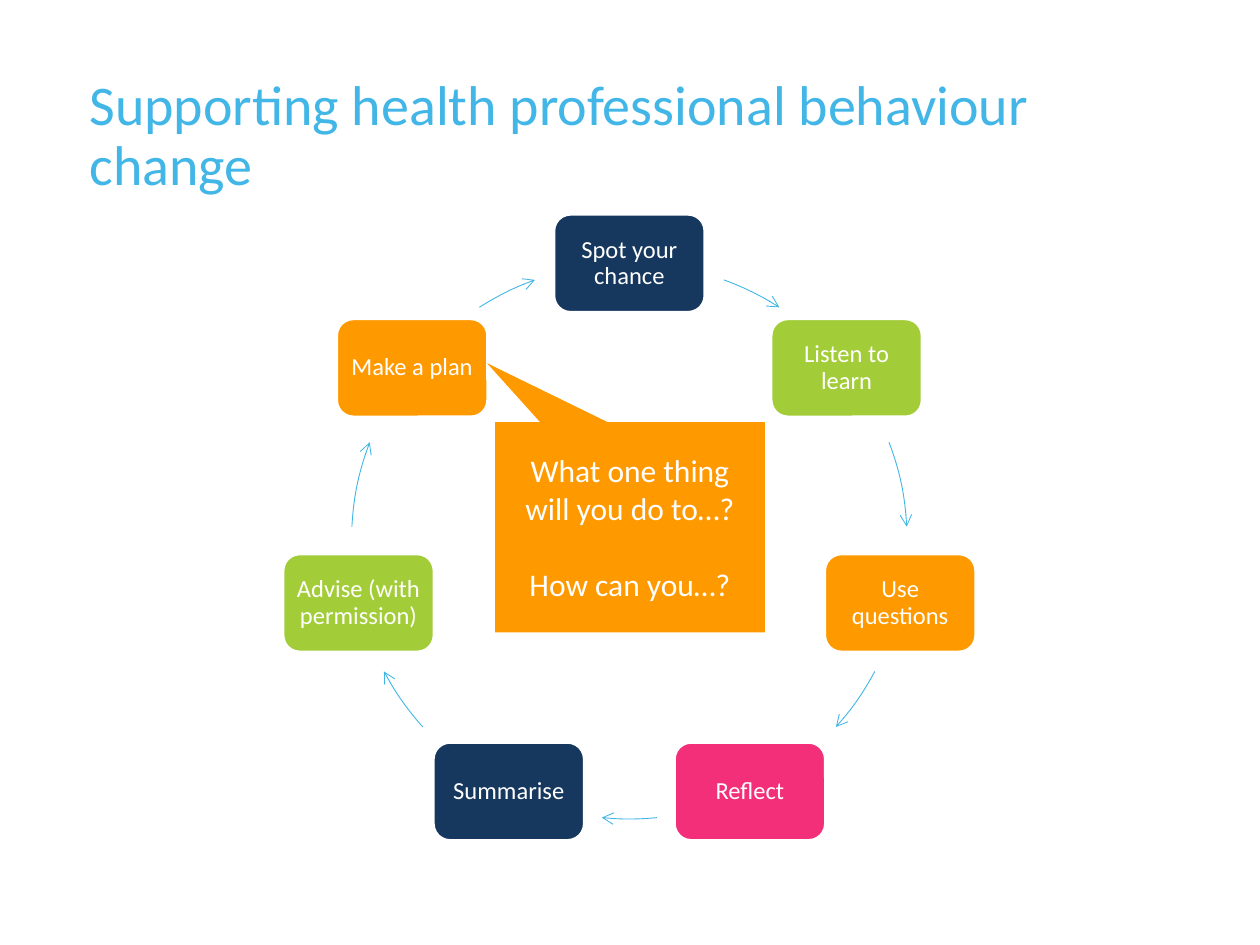
from dataclasses import dataclass
from math import cos, radians, sin

from lxml import etree
from pptx import Presentation
from pptx.dml.color import RGBColor as RGB
from pptx.enum.shapes import MSO_SHAPE as SHAPE
from pptx.enum.text import MSO_ANCHOR as ANCHOR, PP_ALIGN as ALIGN
from pptx.oxml.ns import qn
from pptx.util import Inches, Pt


@dataclass(frozen=True)
class Theme:
    font: str = "Calibri"
    title: RGB = RGB(0x42, 0xB6, 0xE6)
    arrow: RGB = RGB(0x41, 0xB6, 0xE6)
    navy: RGB = RGB(0x16, 0x38, 0x5E)
    green: RGB = RGB(0xA3, 0xCD, 0x38)
    orange: RGB = RGB(0xFF, 0x99, 0x00)
    pink: RGB = RGB(0xF3, 0x2F, 0x79)
    white: RGB = RGB(0xFF, 0xFF, 0xFF)
    title_size: int = 32
    callout_size: int = 18
    step_size: int = 14


T = Theme()

STEPS = [
    ("Spot your chance", T.navy),
    ("Listen to learn", T.green),
    ("Use questions", T.orange),
    ("Reflect", T.pink),
    ("Summarise", T.navy),
    ("Advise (with permission)", T.green),
    ("Make a plan", T.orange),
]

# Start and end of each arrow, in degrees clockwise from the top;
# the left side mirrors the right
RIGHT_ARCS = [(19.87, 32.68), (69.14, 87), (117.96, 131.97)]
ARCS = RIGHT_ARCS + [(174.3, 185.7)] + [
    (360 - end, 360 - start) for start, end in reversed(RIGHT_ARCS)]


def style(p, size, color, align=ALIGN.CENTER):
    p.alignment = align
    for r in p.runs:
        r.font.name = T.font
        r.font.size = Pt(size)
        r.font.color.rgb = color


def add_filled(slide, kind, box, fill):
    sp = slide.shapes.add_shape(kind, *map(Inches, box))
    sp.shadow.inherit = False
    sp.fill.solid()
    sp.fill.fore_color.rgb = fill
    sp.text_frame.word_wrap = True
    sp.text_frame.vertical_anchor = ANCHOR.MIDDLE
    return sp


def add_title(slide, box, text):
    tf = slide.shapes.add_textbox(*map(Inches, box)).text_frame
    tf.word_wrap = True
    tf.margin_left = Inches(0.35)
    tf.text = text
    p = tf.paragraphs[0]
    p.line_spacing = 0.9
    style(p, T.title_size, T.title, ALIGN.LEFT)


def add_step(slide, box, text, fill):
    sp = add_filled(slide, SHAPE.ROUNDED_RECTANGLE, box, fill)
    sp.line.color.rgb = T.white
    sp.line.width = Pt(1)
    tf = sp.text_frame
    tf.margin_left = tf.margin_right = Inches(0.06)
    tf.margin_top = tf.margin_bottom = Inches(0.06)
    tf.text = text
    p = tf.paragraphs[0]
    p.line_spacing = 0.9
    style(p, T.step_size, T.white)


def add_arc_arrow(slide, box, start, end):
    sp = slide.shapes.add_shape(SHAPE.ARC, *map(Inches, box))
    sp.shadow.inherit = False
    # Arc angles run clockwise from the right, in 60000ths of a degree
    for i, angle in enumerate((start, end)):
        sp.adjustments[i] = (angle - 90) % 360 * 60000 / 100000
    sp.fill.background()
    sp.line.color.rgb = T.arrow
    sp.line.width = Pt(0.5)
    etree.SubElement(sp.line._get_or_add_ln(), qn("a:tailEnd"), type="arrow")


def add_cycle(slide, box):
    left, top, size, _ = box
    radius = size / 2
    step_w, step_h = 1.19, 0.77
    for i, ((text, fill), arc) in enumerate(zip(STEPS, ARCS)):
        angle = radians(i * 360 / len(STEPS))
        x = left + radius + radius * sin(angle)
        y = top + radius - radius * cos(angle)
        add_step(slide, (x - step_w / 2, y - step_h / 2, step_w, step_h),
                 text, fill)
        add_arc_arrow(slide, box, *arc)


def add_callout(slide, box, lines):
    sp = add_filled(slide, SHAPE.RECTANGULAR_CALLOUT, box, T.orange)
    sp.line.fill.background()
    sp.adjustments[0] = -0.53
    sp.adjustments[1] = -0.78
    tf = sp.text_frame
    tf.text = "\n".join(lines)
    for i, p in enumerate(tf.paragraphs):
        if i:
            p.space_before = Pt(22)
        style(p, T.callout_size, T.white)


def main():
    prs = Presentation()
    prs.slide_width, prs.slide_height = Inches(10), Inches(7.5)
    slide = prs.slides.add_slide(prs.slide_layouts[6])

    # Ring of steps, with the callout in its middle
    add_cycle(slide, (2.79, 2.09, 4.41, 4.41))
    add_callout(slide, (3.93, 3.35, 2.14, 1.67),
                ["What one thing will you do to…?", "How can you…?"])

    # Heading
    add_title(slide, (0.36, 0.56, 9.27, 1.03),
              "Supporting health professional behaviour change")
    prs.save("out.pptx")


if __name__ == "__main__":
    main()
